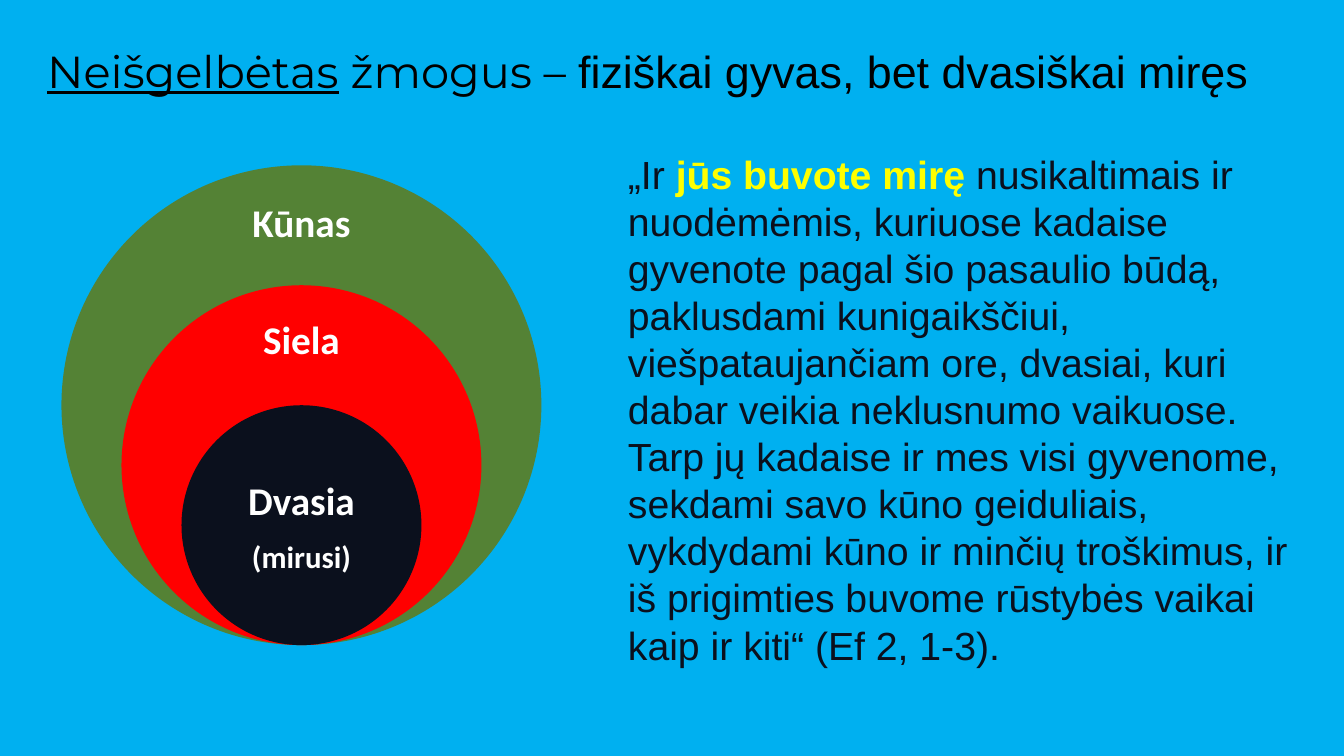
import pptx
import pptx.dml.color
import pptx.enum.shapes
import pptx.enum.text
import pptx.util

Inches = pptx.util.Inches
Points = pptx.util.Pt
Align = pptx.enum.text.PP_ALIGN
Anchor = pptx.enum.text.MSO_ANCHOR
AutoSize = pptx.enum.text.MSO_AUTO_SIZE

COLORS = {
    "sky": "00B0F0",
    "body": "548235",
    "soul": "FF0000",
    "dark": "0B101D",
    "white": "FFFFFF",
    "yellow": "FFFF00",
    "black": "000000",
}


class SlideBuilder:
    """Draws styled circles and text boxes on one slide."""

    def __init__(self, slide, colors):
        self.slide = slide
        self.colors = colors

    def paint(self, fill, color):
        fill.solid()
        fill.fore_color.rgb = self.rgb(color)

    def rgb(self, color):
        return pptx.dml.color.RGBColor.from_string(self.colors[color])

    def apply(self, target, values):
        for name, value in values.items():
            if name == "color":
                target.color.rgb = self.rgb(value)
            else:
                setattr(target, name, value)

    def background(self, color):
        self.paint(self.slide.background.fill, color)

    def circle(self, center, bottom, diameter, color):
        shape = self.slide.shapes.add_shape(
            pptx.enum.shapes.MSO_SHAPE.OVAL,
            Inches(center - diameter / 2), Inches(bottom - diameter),
            Inches(diameter), Inches(diameter))
        shape.shadow.inherit = False
        self.paint(shape.fill, color)
        shape.line.fill.background()

    def text(self, box, paragraphs, font, frame_format, paragraph_format=None, gap=0):
        shape = self.slide.shapes.add_textbox(*map(Inches, box))
        frame = shape.text_frame
        self.apply(frame, frame_format)
        for index, runs in enumerate(paragraphs):
            paragraph = frame.paragraphs[0] if index == 0 else frame.add_paragraph()
            self.apply(paragraph, paragraph_format or {})
            if gap and index < len(paragraphs) - 1:
                paragraph.space_after = Points(gap)
            for words, changes in runs:
                run = paragraph.add_run()
                run.text = words
                self.apply(run.font, {**font, **changes})


def main():
    presentation = pptx.Presentation()
    presentation.slide_width = Inches(13.33)
    presentation.slide_height = Inches(7.5)
    slide = presentation.slides.add_slide(presentation.slide_layouts[6])
    builder = SlideBuilder(slide, COLORS)
    builder.background("sky")

    label_font = {"name": "Calibri", "size": Points(28), "bold": True, "color": "white"}
    margins = ("margin_left", "margin_top", "margin_right", "margin_bottom")
    label_frame = {
        **dict.fromkeys(margins, Inches(0.22)),
        "word_wrap": True,
        "vertical_anchor": Anchor.MIDDLE,
    }
    center, bottom, largest = 2.99, 6.4, 4.76
    layers = [
        ("body", 1, (1.88, 1.66, 0.71), 0.9, [[("Kūnas", {})]]),
        ("soul", 0.75, (3.06, 1.66, 0.67), 0.9, [[("Siela", {})]]),
        ("dark", 0.5, (4.62, 1.68, 1.19), 1.0,
         [[("Dvasia", {})], [("(mirusi)", {"size": Points(22)})]]),
    ]
    for color, scale, (top, width, height), spacing, paragraphs in layers:
        builder.circle(center, bottom, largest * scale, color)
        builder.text((center - width / 2, top, width, height), paragraphs, label_font,
                     label_frame, {"alignment": Align.CENTER, "line_spacing": spacing}, gap=10)

    quote = [
        [("„Ir ", {}),
         ("jūs buvote mirę ", {"color": "yellow", "bold": True}),
         ("nusikaltimais ir nuodėmėmis, kuriuose kadaise gyvenote pagal šio pasaulio "
          "būdą, paklusdami kunigaikščiui, viešpataujančiam ore, dvasiai, kuri dabar "
          "veikia neklusnumo vaikuose.", {})],
        [("Tarp jų kadaise ir mes visi gyvenome, sekdami savo kūno geiduliais, vykdydami "
          "kūno ir minčių troškimus, ir iš prigimties buvome rūstybės vaikai kaip ir "
          "kiti“ (Ef 2, 1-3).", {})],
    ]
    builder.text((6.13, 1.44, 7.04, 5.28), quote,
                 {"name": "Arial", "size": Points(28), "color": "dark"},
                 {"word_wrap": True, "auto_size": AutoSize.SHAPE_TO_FIT_TEXT})

    title = [[("Neišgelbėtas", {"underline": True}),
              (" žmogus – ", {}),
              ("fiziškai gyvas, bet dvasiškai miręs", {"name": "Arial"})]]
    builder.text((0.37, 0.38, 12.66, 0.64), title,
                 {"name": "Montserrat", "size": Points(32), "color": "black"},
                 {"word_wrap": False, "auto_size": AutoSize.SHAPE_TO_FIT_TEXT})

    presentation.save("out.pptx")


if __name__ == "__main__":
    main()
